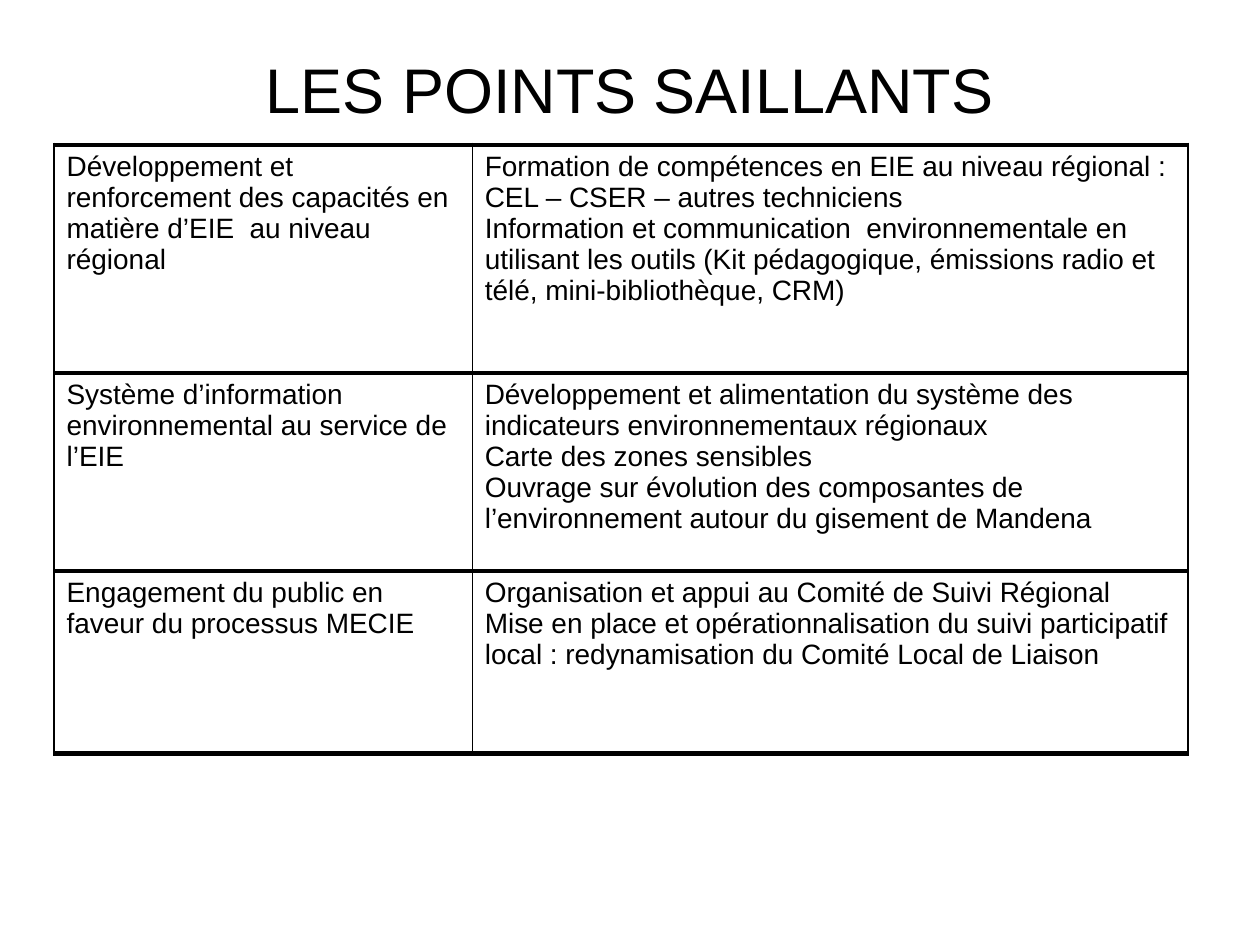
import pptx
import pptx.util
import pptx.dml.color
import pptx.enum.text
import pptx.oxml
import pptx.oxml.ns
from pptx.util import Cm

FONT = "Arial"
BLACK = "000000"
COLUMN_WIDTHS = [8.43, 14.43]
ROW_HEIGHTS = [4.6, 3.99, 3.68]
BORDERS = {"lnL": 1, "lnR": 1, "lnT": 3, "lnB": 3}
ROWS = [
    (
        ["Développement et renforcement des capacités en matière d’EIE  au niveau régional"],
        [
            "Formation de compétences en EIE au niveau régional : CEL – CSER – autres techniciens",
            "Information et communication  environnementale en utilisant les outils "
            "(Kit pédagogique, émissions radio et télé, mini-bibliothèque, CRM)",
        ],
    ),
    (
        ["Système d’information environnemental au service de l’EIE"],
        [
            "Développement et alimentation du système des indicateurs environnementaux régionaux",
            "Carte des zones sensibles",
            "Ouvrage sur évolution des composantes de l’environnement autour du gisement de Mandena",
        ],
    ),
    (
        ["Engagement du public en faveur du processus MECIE"],
        [
            "Organisation et appui au Comité de Suivi Régional",
            "Mise en place et opérationnalisation du suivi participatif local : "
            "redynamisation du Comité Local de Liaison",
        ],
    ),
]


def color(hex_text):
    return pptx.dml.color.RGBColor.from_string(hex_text)


def write_paragraphs(frame, texts, size, alignment=pptx.enum.text.PP_ALIGN.LEFT):
    frame.word_wrap = True
    for index, text in enumerate(texts):
        para = frame.add_paragraph() if index else frame.paragraphs[0]
        para.alignment = alignment
        span = para.add_run()
        span.text = text
        span.font.name = FONT
        span.font.size = pptx.util.Pt(size)
        span.font.color.rgb = color(BLACK)


def add_title(page, text):
    box = page.shapes.add_textbox(Cm(1.27), Cm(0.76), Cm(22.86), Cm(1.55))
    frame = box.text_frame
    frame.margin_top, frame.margin_bottom = Cm(0.26), Cm(0)
    write_paragraphs(frame, [text], 36, pptx.enum.text.PP_ALIGN.CENTER)


def set_borders(cell):
    properties = cell._tc.get_or_add_tcPr()
    for position, (side, width) in enumerate(BORDERS.items()):
        line = pptx.oxml.parse_xml(
            f'<a:{side} {pptx.oxml.ns.nsdecls("a")} w="{pptx.util.Pt(width)}">'
            f'<a:solidFill><a:srgbClr val="{BLACK}"/></a:solidFill></a:{side}>'
        )
        properties.insert(position, line)


def add_points_table(page):
    frame = page.shapes.add_table(
        len(ROWS), len(COLUMN_WIDTHS), Cm(1.09), Cm(2.92),
        Cm(sum(COLUMN_WIDTHS)), Cm(sum(ROW_HEIGHTS)),
    )
    table = frame.table
    table.first_row = table.horz_banding = False
    for column, width in zip(table.columns, COLUMN_WIDTHS):
        column.width = Cm(width)
    for row, height, contents in zip(table.rows, ROW_HEIGHTS, ROWS):
        row.height = Cm(height)
        for cell, texts in zip(row.cells, contents):
            cell.fill.background()
            set_borders(cell)
            write_paragraphs(cell.text_frame, texts, 16)


def main():
    """Build the slide of key points and save it."""
    deck = pptx.Presentation()
    deck.slide_width, deck.slide_height = Cm(25.4), Cm(19.05)
    page = deck.slides.add_slide(deck.slide_layouts[6])
    add_title(page, "LES POINTS SAILLANTS")
    add_points_table(page)
    deck.save("out.pptx")


if __name__ == "__main__":
    main()
